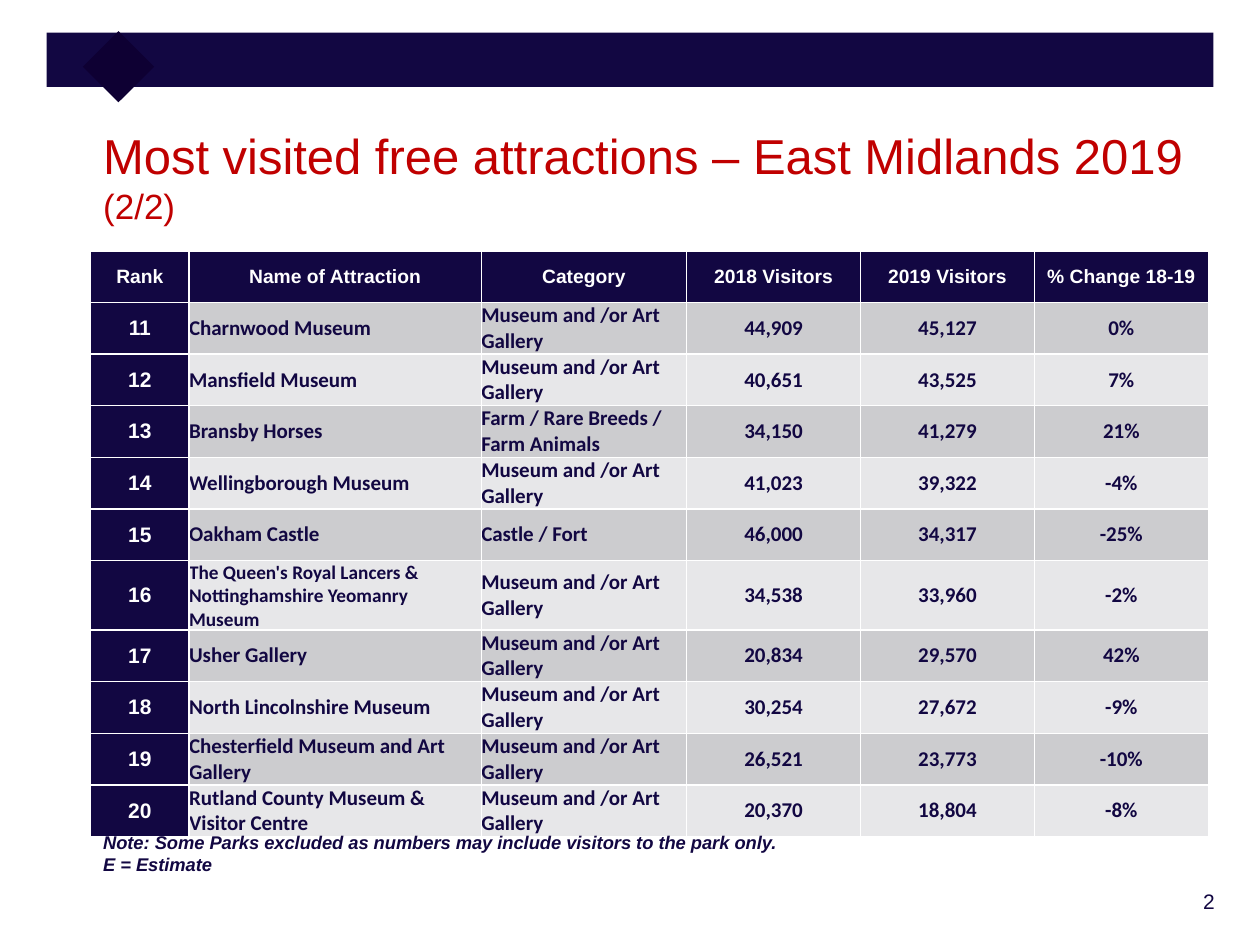
from pptx import Presentation
from pptx.dml.color import RGBColor
from pptx.enum.shapes import MSO_SHAPE
from pptx.enum.text import MSO_ANCHOR, PP_ALIGN
from pptx.util import Inches, Pt

NAVY = RGBColor(0x12, 0x07, 0x42)
DARK = RGBColor(0x0E, 0x00, 0x33)
RED = RGBColor(0xC0, 0x00, 0x00)
WHITE = RGBColor(0xFF, 0xFF, 0xFF)
BANDS = [RGBColor(0xE7, 0xE7, 0xE9), RGBColor(0xCC, 0xCC, 0xCF)]

MUSEUM = "Museum and /or Art Gallery"
HEADERS = ["Rank", "Name of Attraction", "Category", "2018 Visitors", "2019 Visitors", "% Change 18-19"]
ATTRACTIONS = [
    ("Charnwood Museum", MUSEUM, "44,909", "45,127", "0%"),
    ("Mansfield Museum", MUSEUM, "40,651", "43,525", "7%"),
    ("Bransby Horses", "Farm / Rare Breeds / Farm Animals", "34,150", "41,279", "21%"),
    ("Wellingborough Museum", MUSEUM, "41,023", "39,322", "-4%"),
    ("Oakham Castle", "Castle / Fort", "46,000", "34,317", "-25%"),
    ("The Queen's Royal Lancers & Nottinghamshire Yeomanry Museum", MUSEUM, "34,538", "33,960", "-2%"),
    ("Usher Gallery", MUSEUM, "20,834", "29,570", "42%"),
    ("North Lincolnshire Museum", MUSEUM, "30,254", "27,672", "-9%"),
    ("Chesterfield Museum and Art Gallery", MUSEUM, "26,521", "23,773", "-10%"),
    ("Rutland County Museum & Visitor Centre", MUSEUM, "20,370", "18,804", "-8%"),
]
FIRST_RANK = 11
COL_WIDTHS = [0.78, 2.32, 1.63, 1.38, 1.38, 1.38]
ROW_HEIGHT = 0.41


def add_run(p, text, size, color, **formats):
    r = p.add_run()
    r.text = text
    r.font.color.rgb = color
    for name, value in {"name": "Arial", "size": Pt(size), **formats}.items():
        setattr(r.font, name, value)


def add_text(s, left, top, width, height):
    tf = s.shapes.add_textbox(Inches(left), Inches(top), Inches(width), Inches(height)).text_frame
    tf.word_wrap = True
    return tf


prs = Presentation()
prs.slide_width, prs.slide_height = Inches(10), Inches(7.5)
s = prs.slides.add_slide(prs.slide_layouts[6])

tf = add_text(s, 8.53, 7, 1.21, 0.36)
tf.paragraphs[0].alignment = PP_ALIGN.RIGHT
add_run(tf.paragraphs[0], "2", 12, NAVY)

banner = s.shapes.add_group_shape()
for left, top, width, height, rotation, color in [
    (0.37, 0.26, 9.26, 0.43, 0, NAVY),
    (0.74, 0.33, 0.4, 0.4, 45, DARK),
]:
    sp = banner.shapes.add_shape(
        MSO_SHAPE.RECTANGLE, Inches(left), Inches(top), Inches(width), Inches(height))
    sp.rotation = rotation
    sp.shadow.inherit = False
    sp.fill.solid()
    sp.fill.fore_color.rgb = color
    sp.line.fill.background()

tf = add_text(s, 0.72, 0.95, 8.91, 0.89)
tf.vertical_anchor = MSO_ANCHOR.MIDDLE
p = tf.paragraphs[0]
add_run(p, "Most visited free attractions – East Midlands 2019", 28, RED)
p.add_line_break()
add_run(p, "(2/2)", 20, RED)

rows = [HEADERS] + [(str(rank), *row) for rank, row in enumerate(ATTRACTIONS, FIRST_RANK)]
table = s.shapes.add_table(
    len(rows), len(HEADERS), Inches(0.72), Inches(1.99),
    Inches(sum(COL_WIDTHS)), Inches(ROW_HEIGHT * len(rows))).table
table.first_col = True
for column, width in zip(table.columns, COL_WIDTHS):
    column.width = Inches(width)

for i, row in enumerate(rows):
    table.rows[i].height = Inches(ROW_HEIGHT)
    for j, text in enumerate(row):
        cell = table.cell(i, j)
        heading = i == 0 or j == 0
        cell.vertical_anchor = MSO_ANCHOR.MIDDLE
        cell.fill.solid()
        cell.fill.fore_color.rgb = NAVY if heading else BANDS[i % 2]
        if not heading:
            for side in ("left", "right", "top", "bottom"):
                setattr(cell, f"margin_{side}", 0)
        p = cell.text_frame.paragraphs[0]
        p.alignment = PP_ALIGN.LEFT if not heading and j < 3 else PP_ALIGN.CENTER
        size = 11 if i == 0 or len(text) > 40 else 12
        add_run(p, text, size, WHITE if heading else NAVY,
                name="Arial" if heading else "Calibri", bold=True)

tf = add_text(s, 0.72, 6.55, 8.65, 0.45)
add_run(tf.paragraphs[0], "Note: Some Parks excluded as numbers may include visitors to the park only.",
        10.5, NAVY, bold=True, italic=True)
add_run(tf.add_paragraph(), "E = Estimate", 10.5, NAVY, bold=True, italic=True)

prs.save("out.pptx")
